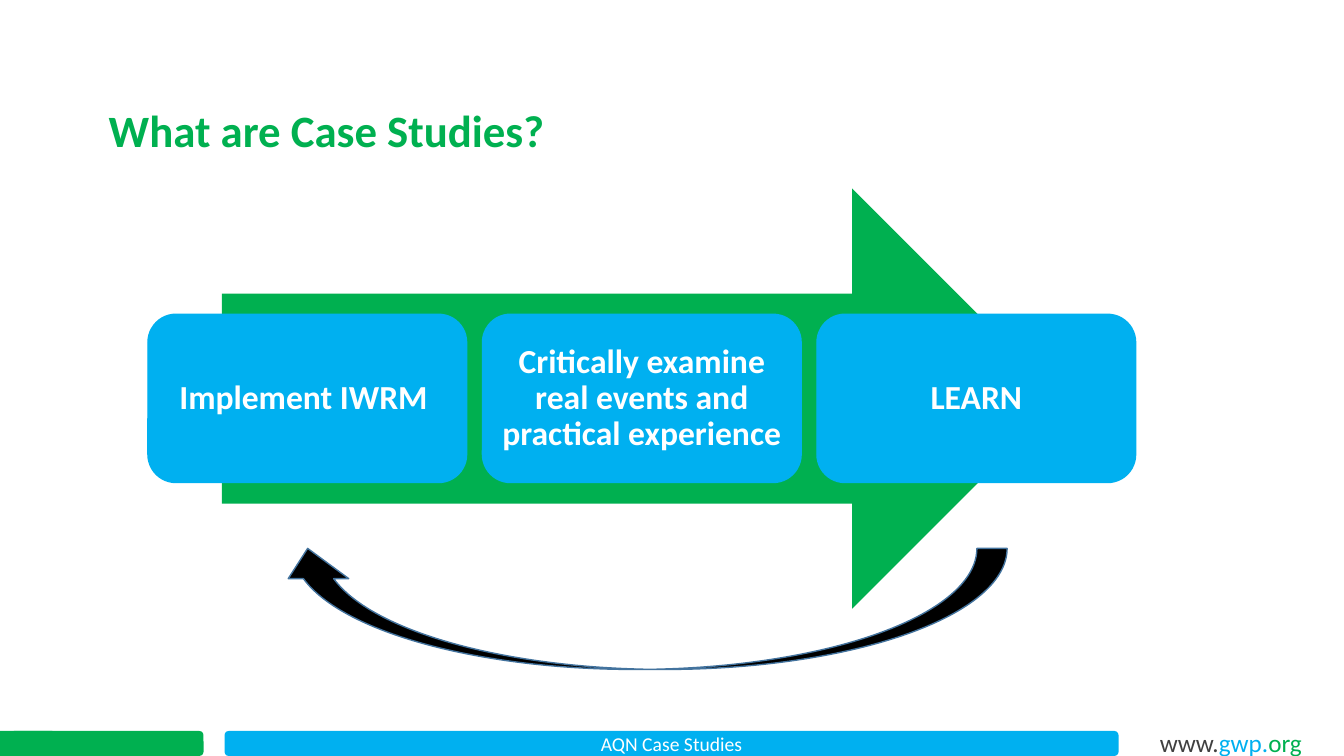
from dataclasses import dataclass

from pptx import Presentation
from pptx.dml.color import RGBColor
from pptx.enum.shapes import MSO_SHAPE
from pptx.enum.text import MSO_ANCHOR, PP_ALIGN
from pptx.util import Cm, Pt

ROUNDED = MSO_SHAPE.ROUNDED_RECTANGLE
RECTANGLE = MSO_SHAPE.RECTANGLE
RIGHT_ARROW = MSO_SHAPE.RIGHT_ARROW
CURVED_ARROW = MSO_SHAPE.CURVED_LEFT_ARROW
MIDDLE, TOP = MSO_ANCHOR.MIDDLE, MSO_ANCHOR.TOP
CENTER, LEFT = PP_ALIGN.CENTER, PP_ALIGN.LEFT

FONT = "Calibri"
COLORS = {
    "green": "00B050",
    "blue": "00B0F0",
    "white": "FFFFFF",
    "gray": "404040",
    "black": "000000",
    "outline": "43739E",
}

TITLE_BOX = (2.49, 2.57, 12.88, 1.55)
STEPS = ["Implement IWRM ", "Critically examine real events and practical experience", "LEARN"]
STEP_LEFT, STEP_TOP, STEP_WIDTH, STEP_HEIGHT = 3.73, 7.92, 8.03, 4.24
STEP_PITCH = 8.43


@dataclass
class Block:
    """A filled shape; its box is left, top, width and height in centimetres."""
    kind: int
    box: tuple[float, float, float, float]
    fill: str
    line: str | None = None
    rotation: float = 0


@dataclass
class Label:
    """Coloured runs that form one paragraph."""
    runs: list[tuple[str, str]]
    size: float
    bold: bool = False
    align: int = CENTER
    anchor: int = MIDDLE
    line_spacing: float = 1.0
    space_after: float = 0


def color(name: str) -> RGBColor:
    return RGBColor.from_string(COLORS[name])


def set_all(target, values: dict) -> None:
    for name, value in values.items():
        setattr(target, name, value)


def place(shape, box: tuple[float, float, float, float]) -> None:
    set_all(shape, dict(zip(("left", "top", "width", "height"), map(Cm, box))))


def write_label(shape, label: Label) -> None:
    frame = shape.text_frame
    set_all(frame, {
        "word_wrap": True,
        "vertical_anchor": label.anchor,
        "margin_left": Cm(0.25),
        "margin_right": Cm(0.25),
        "margin_top": Cm(0.13),
        "margin_bottom": Cm(0.13),
    })
    paragraph = frame.paragraphs[0]
    set_all(paragraph, {
        "alignment": label.align,
        "line_spacing": label.line_spacing,
        "space_before": Pt(0),
        "space_after": Pt(label.space_after),
    })
    for text, color_name in label.runs:
        run = paragraph.add_run()
        run.text = text
        set_all(run.font, {"name": FONT, "size": Pt(label.size), "bold": label.bold})
        run.font.color.rgb = color(color_name)


def add_block(slide, block: Block, label: Label | None = None) -> None:
    shape = slide.shapes.add_shape(block.kind, *map(Cm, block.box))
    shape.shadow.inherit = False
    shape.rotation = block.rotation
    shape.fill.solid()
    shape.fill.fore_color.rgb = color(block.fill)
    if block.line:
        shape.line.color.rgb = color(block.line)
        shape.line.width = Pt(1)
    else:
        shape.line.fill.background()
    if label:
        write_label(shape, label)


def add_footer(slide) -> None:
    add_block(slide, Block(ROUNDED, (0.25, 18.42, 4.88, 0.63), "green"))
    add_block(slide, Block(ROUNDED, (5.66, 18.42, 22.53, 0.63), "blue"),
              Label([("AQN Case Studies", "white")], 14))
    add_block(slide, Block(RECTANGLE, (28.98, 18.08, 4.17, 0.97), "white"),
              Label([("www.", "gray"), ("gwp.", "blue"), ("org", "green")], 18,
                    align=LEFT, anchor=TOP, line_spacing=1.15, space_after=10))
    # Squares off the left end of the green bar
    add_block(slide, Block(RECTANGLE, (0, 18.42, 1.32, 0.63), "green"))


def add_process(slide) -> None:
    add_block(slide, Block(RIGHT_ARROW, (5.59, 4.75, 21.18, 10.59), "green"))
    for index, text in enumerate(STEPS):
        box = (STEP_LEFT + index * STEP_PITCH, STEP_TOP, STEP_WIDTH, STEP_HEIGHT)
        add_block(slide, Block(ROUNDED, box, "blue", "blue"),
                  Label([(text, "white")], 24, bold=True, line_spacing=0.9))
    # Feedback arrow from the last step to the first
    add_block(slide, Block(CURVED_ARROW, (14.66, 6.15, 3.05, 18.39), "black", "outline", 90))


def main() -> None:
    presentation = Presentation()
    set_all(presentation, {"slide_width": Cm(33.87), "slide_height": Cm(19.05)})
    slide = presentation.slides.add_slide(presentation.slide_layouts.get_by_name("Title Only"))

    # Title
    title = slide.shapes.title
    place(title, TITLE_BOX)
    write_label(title, Label([("What are Case Studies?", "green")], 32, bold=True,
                             align=LEFT, line_spacing=0.9))

    add_footer(slide)
    add_process(slide)
    presentation.save("out.pptx")


if __name__ == "__main__":
    main()
